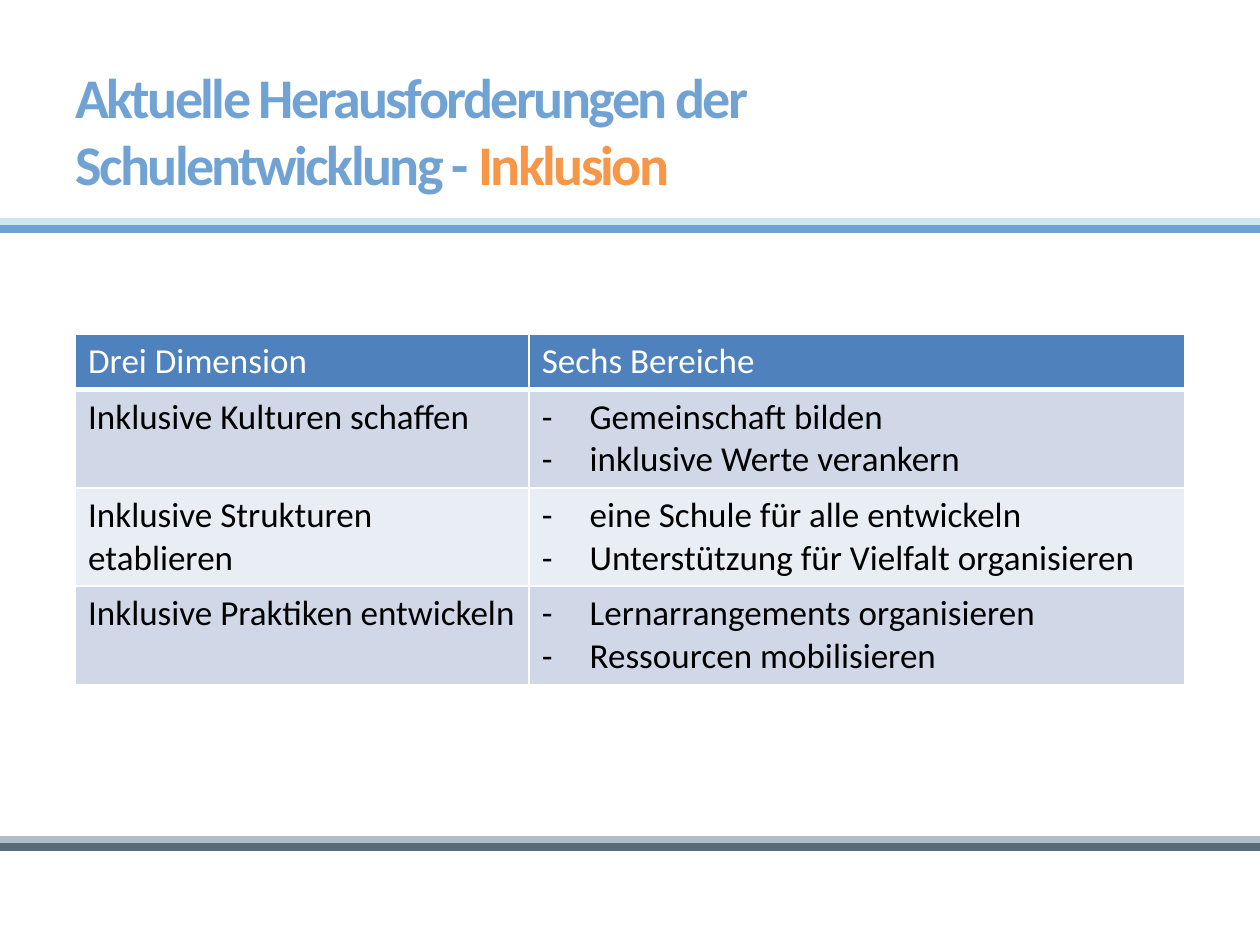
from pptx import Presentation
from pptx.dml.color import RGBColor
from pptx.enum.shapes import MSO_CONNECTOR as Link
from pptx.enum.text import MSO_ANCHOR as Anchor, MSO_AUTO_SIZE as Fit, PP_ALIGN as Align
from pptx.oxml.ns import qn
from pptx.util import Inches, Pt
from lxml.etree import SubElement as Sub


def hue(code):
    return RGBColor.from_string(code)


class Deck:
    """Holds the text style and the current slide."""

    font = {"name": "Calibri", "size": Pt(20), "bold": False}
    head = {"size": Pt(32), "bold": True}
    box = {"word_wrap": True, "auto_size": Fit.NONE, "vertical_anchor": Anchor.BOTTOM}
    edge = "FFFFFF"

    def __init__(self, wide, high):
        self.show = Presentation()
        self.show.slide_width, self.show.slide_height = Inches(wide), Inches(high)
        self.slide = self.show.slides.add_slide(self.show.slide_layouts[5])

    def label(self, para, text, color, **extra):
        run = para.add_run()
        run.text = text
        for key, value in {**self.font, **extra}.items():
            setattr(run.font, key, value)
        run.font.color.rgb = hue(color)
        return run

    def title(self, place, parts):
        shape = self.slide.shapes.title
        for key, value in zip(("left", "top", "width", "height"), place):
            setattr(shape, key, Inches(value))
        for key, value in self.box.items():
            setattr(shape.text_frame, key, value)
        para = shape.text_frame.paragraphs[0]
        para.alignment = Align.LEFT
        for text, color in parts:
            run = self.label(para, text, color, **self.head)
            run._r.get_or_add_rPr().set("spc", "-150")

    def rule(self, y, color):
        ends = [Inches(n) for n in (0, y, 10.12, y)]
        line = self.slide.shapes.add_connector(Link.STRAIGHT, *ends)
        line.line.color.rgb = hue(color)
        line.line.width = Pt(4.5)
        Sub(line._element.spPr, qn("a:effectLst"))

    def dash(self, para):
        props = para._p.get_or_add_pPr()
        props.set("marL", str(Inches(0.38)))
        props.set("indent", str(-Inches(0.38)))
        Sub(props, qn("a:buFont"), typeface="Calibri")
        Sub(props, qn("a:buChar"), char="-")

    def cell(self, cell, lines, fill, color, base, dashed):
        props = cell._tc.get_or_add_tcPr()
        for side in "LRTB":
            width = Pt(base if side == "B" else 1)
            line = Sub(props, qn(f"a:ln{side}"), w=str(width))
            Sub(Sub(line, qn("a:solidFill")), qn("a:srgbClr"), val=self.edge)
        cell.fill.solid()
        cell.fill.fore_color.rgb = hue(fill)
        frame = cell.text_frame
        for i, text in enumerate(lines):
            para = frame.add_paragraph() if i else frame.paragraphs[0]
            if dashed:
                self.dash(para)
            self.label(para, text, color)

    def table(self, place, cols, highs, rows):
        area = [Inches(n) for n in place]
        grid = self.slide.shapes.add_table(len(rows), len(cols), *area).table
        for col, width in zip(grid.columns, cols):
            col.width = Inches(width)
        for r, (row, high) in enumerate(zip(rows, highs)):
            grid.rows[r].height = Inches(high)
            fill = ("E9EDF4", "D0D8E8")[r % 2] if r else "4F81BD"
            color, base = ("000000", 1) if r else ("FFFFFF", 3)
            for c, lines in enumerate(row):
                self.cell(grid.cell(r, c), lines, fill, color, base, r and c)


def main():
    deck = Deck(10, 7.5)
    for y, color in ((6.67, "B0BEC6"), (6.72, "586B79"), (1.76, "CFE5F1"), (1.82, "70A3D4")):
        deck.rule(y, color)
    deck.title((0.5, 0.37, 7.62, 1.24), [
        ("Aktuelle Herausforderungen der Schulentwicklung - ", "70A3D4"),
        ("Inklusion", "F79646"),
    ])
    rows = [
        (["Drei Dimension"], ["Sechs Bereiche"]),
        (["Inklusive Kulturen schaffen"],
         ["Gemeinschaft bilden", "inklusive Werte verankern"]),
        (["Inklusive Strukturen etablieren"],
         ["eine Schule für alle entwickeln", "Unterstützung für Vielfalt organisieren"]),
        (["Inklusive Praktiken entwickeln"],
         ["Lernarrangements organisieren", "Ressourcen mobilisieren"]),
    ]
    deck.table((0.6, 2.65, 8.8, 2.77), (3.6, 5.2), (0.43, 0.78, 0.78, 0.78), rows)
    deck.show.save("out.pptx")


if __name__ == "__main__":
    main()
